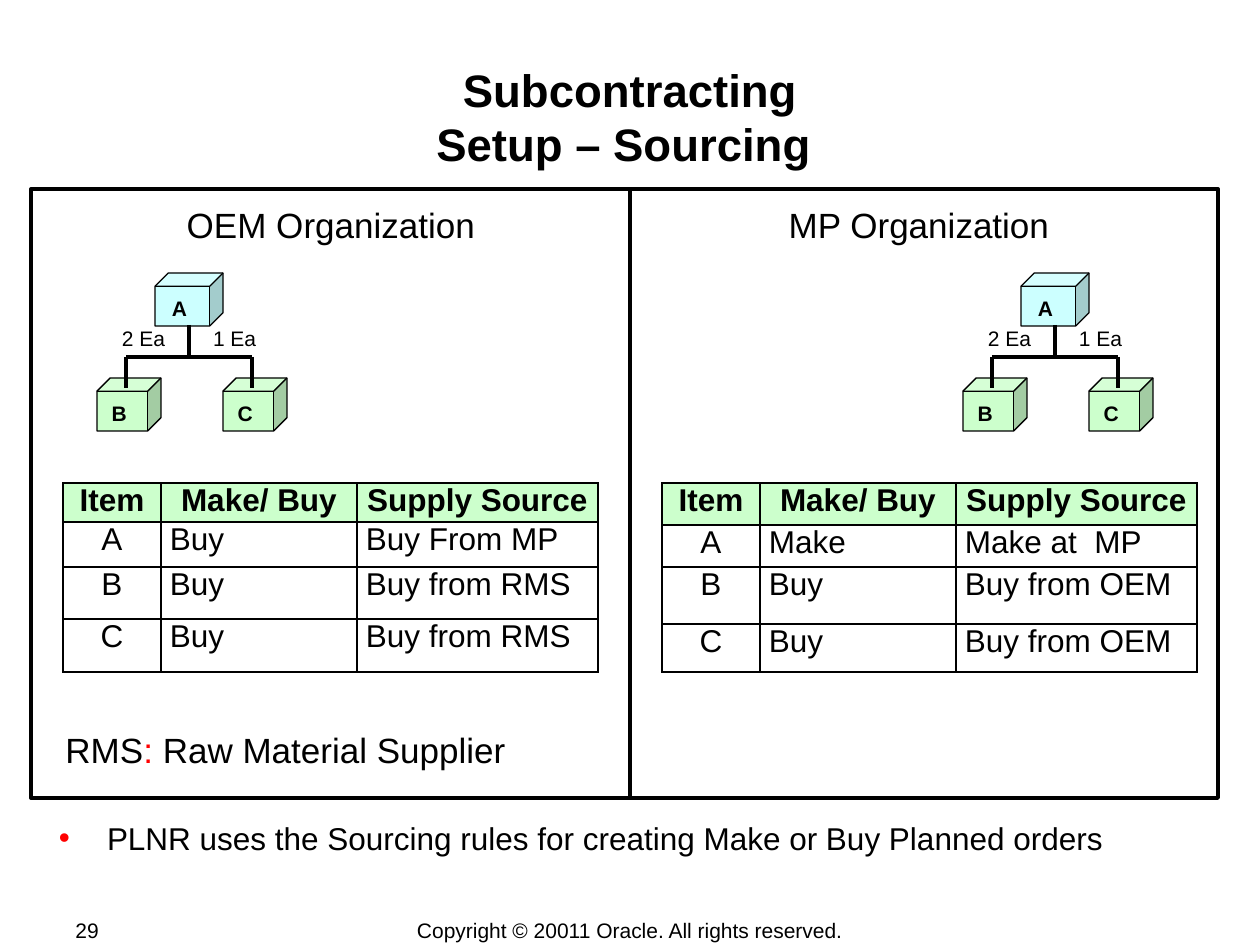
from lxml.etree import SubElement
from pptx import Presentation
from pptx.dml.color import RGBColor
from pptx.enum.shapes import MSO_CONNECTOR, MSO_SHAPE
from pptx.enum.text import MSO_ANCHOR, PP_ALIGN
from pptx.oxml.ns import qn
from pptx.util import Pt

SCALE = 914400 / 126
BLACK = "000000"
RED = "FF0000"
GREEN = "CCFFCC"
CYAN = "CCFFFF"


def px(*lengths):
    return [round(length * SCALE) for length in lengths]


def write_text(frame, text, size=18, color=BLACK, bold=False, align=PP_ALIGN.LEFT,
               anchor=None, margins=None, wrap=None):
    if anchor is not None:
        frame.vertical_anchor = anchor
    if wrap is not None:
        frame.word_wrap = wrap
    if margins is not None:
        (frame.margin_left, frame.margin_top,
         frame.margin_right, frame.margin_bottom) = px(*margins)
    paragraph = frame.paragraphs[0]
    paragraph.text = text
    paragraph.alignment = align
    for line_break in paragraph._p.findall(qn("a:br")):
        SubElement(line_break, qn("a:rPr"), sz=str(size * 100))
    for run in paragraph.runs:
        run.font.name = "Arial"
        run.font.size = Pt(size)
        run.font.bold = bold
        run.font.color.rgb = RGBColor.from_string(color)
    return paragraph


presentation = Presentation()
presentation.slide_width, presentation.slide_height = px(1260, 945)
slide = presentation.slides.add_slide(presentation.slide_layouts[5])
shapes = slide.shapes

title = shapes.title
title.left, title.top, title.width, title.height = px(84, 56, 1092, 121)
write_text(title.text_frame, "Subcontracting\vSetup – Sourcing ", size=26, bold=True,
           align=PP_ALIGN.CENTER, anchor=MSO_ANCHOR.MIDDLE,
           margins=(1, 1, 1, 1), wrap=True)

frame = shapes.add_shape(MSO_SHAPE.RECTANGLE, *px(31, 189, 1187, 609))
frame.shadow.inherit = False
frame.fill.background()
frame.line.color.rgb = RGBColor.from_string(BLACK)
frame.line.width = Pt(2.25)
lines = [(shapes, 630, 189, 630, 798)]

cubes = [("A", 155, 273, 68, CYAN), ("B", 97, 378, 64, GREEN), ("C", 223, 378, 64, GREEN)]
branches = [(189, 325, 189, 357), (126, 357, 252, 357),
            (126, 357, 126, 388), (252, 357, 252, 388)]
quantities = [("2 Ea", 58, PP_ALIGN.RIGHT), ("1 Ea", 213, PP_ALIGN.LEFT)]

for offset in (0, 866):
    tree = shapes.add_group_shape().shapes
    for name, left, top, width, color in cubes:
        cube = tree.add_shape(MSO_SHAPE.CUBE, *px(left + offset, top, width, 53))
        cube.shadow.inherit = False
        cube.fill.solid()
        cube.fill.fore_color.rgb = RGBColor.from_string(color)
        cube.line.color.rgb = RGBColor.from_string(BLACK)
        cube.line.width = Pt(0)
        write_text(cube.text_frame, name, size=12, bold=True, align=PP_ALIGN.CENTER,
                   anchor=MSO_ANCHOR.MIDDLE, margins=(0, 5, 6, 0), wrap=False)
    for x1, y1, x2, y2 in branches:
        lines.append((tree, x1 + offset, y1, x2 + offset, y2))
    for text, left, align in quantities:
        label = tree.add_textbox(*px(left + offset, 326, 107, 25))
        write_text(label.text_frame, text, size=12, align=align,
                   margins=(0, 0, 0, 0), wrap=True)

for container, x1, y1, x2, y2 in lines:
    line = container.add_connector(MSO_CONNECTOR.STRAIGHT, *px(x1, y1, x2, y2))
    line.line.color.rgb = RGBColor.from_string(BLACK)
    line.line.width = Pt(2.25)
    SubElement(line._element.spPr, qn("a:effectLst"))

for text, left in (("OEM Organization", 147), ("MP Organization", 735)):
    label = shapes.add_textbox(*px(left, 197, 368, 54))
    write_text(label.text_frame, text, size=20, align=PP_ALIGN.CENTER, wrap=True)

header = ("Item", "Make/ Buy", "Supply Source")
sourcing_tables = [
    (63, (39, 45, 52, 53), [header, ("A", "Buy", "Buy From MP"),
                            ("B", "Buy", "Buy from RMS"), ("C", "Buy", "Buy from RMS")]),
    (662, (42, 42, 57, 48), [header, ("A", "Make", "Make at  MP"),
                             ("B", "Buy", "Buy from OEM"), ("C", "Buy", "Buy from OEM")]),
]
for left, heights, rows in sourcing_tables:
    table = shapes.add_table(4, 3, *px(left, 483, 535, sum(heights))).table
    table.horz_banding = False
    for column, width in zip(table.columns, px(98, 196, 241)):
        column.width = width
    for row, height in zip(table.rows, px(*heights)):
        row.height = height
    for row_index, row in enumerate(rows):
        for column_index, text in enumerate(row):
            cell = table.cell(row_index, column_index)
            is_header = row_index == 0
            centered = is_header or column_index == 0
            (cell.margin_left, cell.margin_top,
             cell.margin_right, cell.margin_bottom) = px(0 if centered else 9, 0, 0, 0)
            properties = cell._tc.get_or_add_tcPr()
            for side in ("lnL", "lnR", "lnT", "lnB"):
                border = SubElement(properties, qn(f"a:{side}"), w=str(Pt(1)))
                SubElement(SubElement(border, qn("a:solidFill")), qn("a:srgbClr"), val=BLACK)
            if is_header:
                cell.fill.solid()
                cell.fill.fore_color.rgb = RGBColor.from_string(GREEN)
            else:
                cell.fill.background()
            write_text(cell.text_frame, text, bold=is_header,
                       align=PP_ALIGN.CENTER if centered else PP_ALIGN.LEFT)

legend = shapes.add_textbox(*px(53, 722, 494, 54))
paragraph = write_text(legend.text_frame, "RMS", size=20, wrap=True)
for text, color in ((": ", RED), ("Raw Material Supplier", BLACK)):
    run = paragraph.add_run()
    run.text = text
    run.font.name = "Arial"
    run.font.size = Pt(20)
    run.font.color.rgb = RGBColor.from_string(color)

note = shapes.add_textbox(*px(42, 818, 1176, 42))
paragraph = write_text(note.text_frame,
                       "PLNR uses the Sourcing rules for creating Make or Buy Planned orders",
                       margins=(1, 1, 1, 1), wrap=True)
paragraph.level = 1
indent, hanging = px(64, -48)
properties = paragraph._p.get_or_add_pPr()
properties.set("marL", str(indent))
properties.set("indent", str(hanging))
SubElement(SubElement(properties, qn("a:buClr")), qn("a:srgbClr"), val=RED)
SubElement(properties, qn("a:buFont"), typeface="Arial")
SubElement(properties, qn("a:buChar"), char="•")

footers = [("29", 63, 134, PP_ALIGN.LEFT),
           ("Copyright © 20011 Oracle. All rights reserved.", 347, 566, PP_ALIGN.CENTER)]
for text, left, width, align in footers:
    footer = shapes.add_textbox(*px(left, 917, width, 26))
    write_text(footer.text_frame, text, size=12, align=align,
               anchor=MSO_ANCHOR.MIDDLE, wrap=align == PP_ALIGN.LEFT)

presentation.save("out.pptx")
